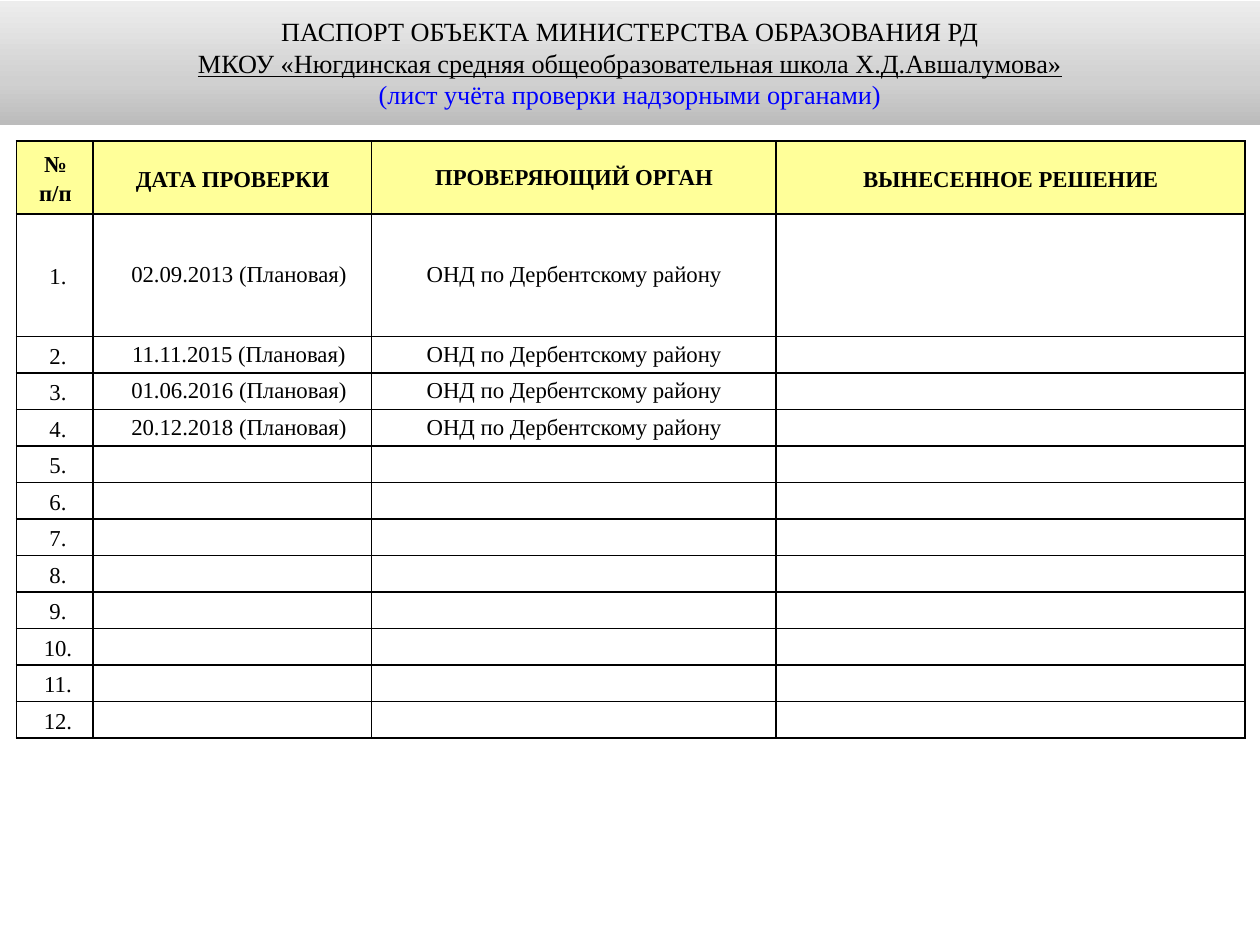
from lxml.etree import SubElement
from pptx import Presentation
from pptx.dml.color import RGBColor
from pptx.enum.text import MSO_ANCHOR, MSO_AUTO_SIZE, PP_ALIGN
from pptx.oxml import parse_xml
from pptx.oxml.ns import nsdecls, qn
from pptx.util import Inches, Pt


def rgb(value):
    return RGBColor.from_string(value)


class SlideBuilder:
    font = "Times New Roman"
    ink = "000000"
    header_fill = "FFFF99"
    body_fill = "FFFFFF"
    cell_size = 13
    title_size = 15

    def __init__(self, prs):
        self.s = prs.slides.add_slide(prs.slide_layouts[5])

    def format_run(self, r, size, color=ink, bold=False, underline=False):
        r.font.name = self.font
        r.font.size = Pt(size)
        r.font.color.rgb = rgb(color)
        r.font.bold = bold
        r.font.underline = underline

    def gradient(self, sp, stops, angle):
        gs = "".join(
            f'<a:gs pos="{pos * 1000}"><a:srgbClr val="{color}"/></a:gs>'
            for pos, color in stops
        )
        fill = parse_xml(
            f'<a:gradFill {nsdecls("a")} rotWithShape="1"><a:gsLst>{gs}</a:gsLst>'
            f'<a:lin ang="{angle * 60000}" scaled="0"/></a:gradFill>'
        )
        sp.fill.background()
        sp_pr = sp._element.spPr
        sp_pr.replace(sp_pr.find(qn("a:noFill")), fill)

    def title(self, lines, left, top, width, height):
        sp = self.s.shapes.title
        sp.left, sp.top = Inches(left), Inches(top)
        sp.width, sp.height = Inches(width), Inches(height)
        self.gradient(sp, [(0, "BCBCBC"), (35, "D0D0D0"), (100, "EDEDED")], 270)
        tf = sp.text_frame
        tf.text = "\n".join(text for text, _, _ in lines)
        tf.word_wrap = True
        tf.auto_size = MSO_AUTO_SIZE.NONE
        tf.vertical_anchor = MSO_ANCHOR.MIDDLE
        for p, (_, color, underline) in zip(tf.paragraphs, lines):
            p.alignment = PP_ALIGN.CENTER
            self.format_run(p.runs[0], self.title_size, color, underline=underline)

    def borders(self, cell):
        tc_pr = cell._tc.get_or_add_tcPr()
        for side in ("lnL", "lnR", "lnT", "lnB"):
            ln = SubElement(tc_pr, qn(f"a:{side}"), w=str(Pt(1)))
            fill = SubElement(ln, qn("a:solidFill"))
            SubElement(fill, qn("a:srgbClr"), val=self.ink)

    def cell(self, cell, text, fill, bold, indent, spacing):
        self.borders(cell)
        cell.fill.solid()
        cell.fill.fore_color.rgb = rgb(fill)
        cell.vertical_anchor = MSO_ANCHOR.MIDDLE
        cell.margin_left = cell.margin_right = Inches(0.03)
        cell.margin_top = cell.margin_bottom = 0
        cell.text_frame.text = text
        for p in cell.text_frame.paragraphs:
            p.alignment = PP_ALIGN.CENTER
            p.line_spacing = spacing
            p._p.get_or_add_pPr().set("marL", str(Inches(indent)))
            for r in p.runs:
                self.format_run(r, self.cell_size, bold=bold)
            if not p.runs:
                SubElement(p._p, qn("a:endParaRPr"), sz=str(self.cell_size * 100))

    def table(self, rows, left, top, widths, heights):
        table = self.s.shapes.add_table(
            len(rows), len(widths), Inches(left), Inches(top),
            Inches(sum(widths)), Inches(sum(heights)),
        ).table
        table.first_row = table.horz_banding = False
        for column, width in zip(table.columns, widths):
            column.width = Inches(width)
        for row, height in zip(table.rows, heights):
            row.height = Inches(height)
        for i, row in enumerate(rows):
            header = i == 0
            fill = self.header_fill if header else self.body_fill
            indents = (0.01, 0, 0, 0) if header else (0.05, 0.1, 0, 0)
            for j, text in enumerate(row):
                exact = j == 2 or (j == 1 and not header)
                spacing = Pt(14) if exact else 1.15
                self.cell(table.cell(i, j), text, fill, header, indents[j], spacing)


def main():
    prs = Presentation()
    prs.slide_width, prs.slide_height = Inches(10), Inches(7.5)
    builder = SlideBuilder(prs)
    builder.title(
        [
            ("ПАСПОРТ ОБЪЕКТА МИНИСТЕРСТВА ОБРАЗОВАНИЯ РД", "000000", False),
            ("МКОУ «Нюгдинская средняя общеобразовательная школа Х.Д.Авшалумова»",
             "000000", True),
            ("(лист учёта проверки надзорными органами)", "0000FF", False),
        ],
        0, 0.01, 10, 0.98,
    )
    dates = ["02.09.2013", "11.11.2015", "01.06.2016", "20.12.2018"]
    rows = [["№\nп/п", "ДАТА ПРОВЕРКИ", "ПРОВЕРЯЮЩИЙ ОРГАН", "ВЫНЕСЕННОЕ РЕШЕНИЕ"]]
    for number in range(1, 13):
        checked = number <= len(dates)
        date = f"{dates[number - 1]} (Плановая)" if checked else ""
        authority = "ОНД по Дербентскому району" if checked else ""
        rows.append([f"{number}.", date, authority, ""])
    builder.table(
        rows, 0.13, 1.12, [0.61, 2.21, 3.21, 3.72], [0.58, 0.97] + [0.29] * 11
    )
    prs.save("out.pptx")


if __name__ == "__main__":
    main()
